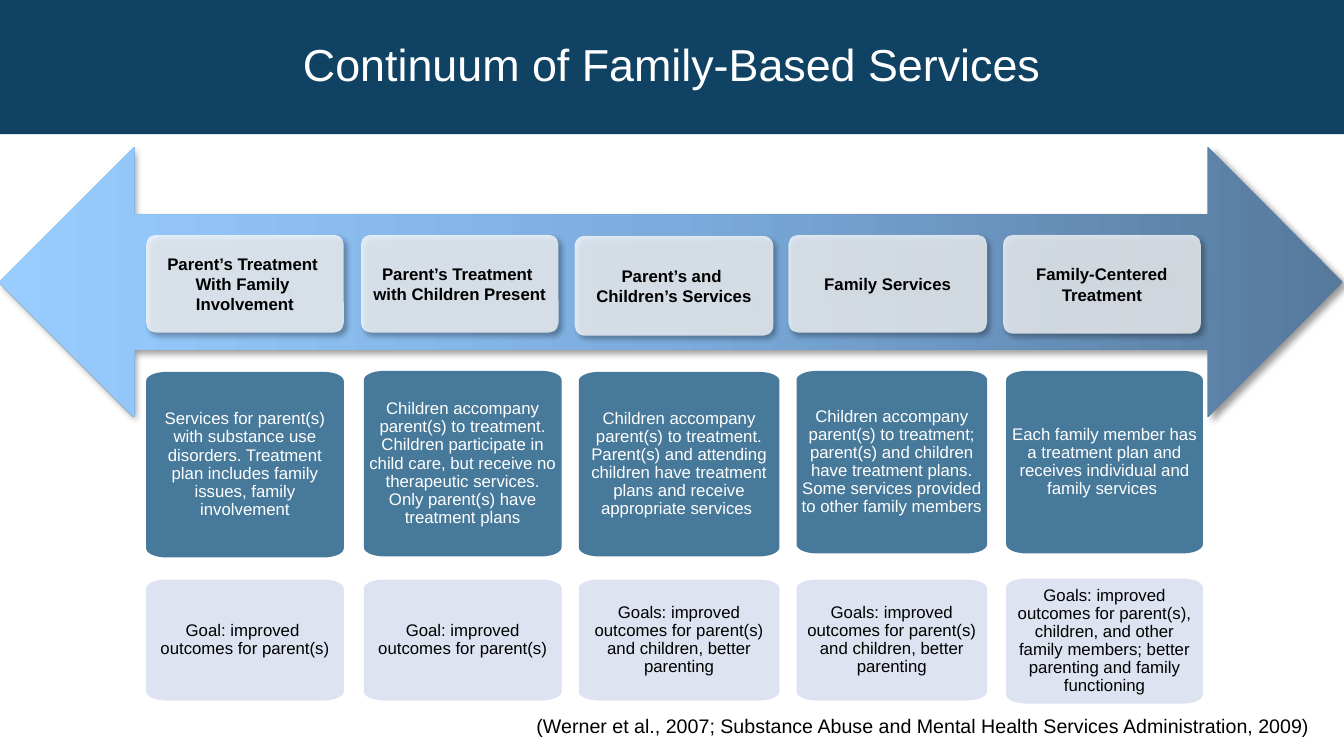
"""Build the slide on the continuum of family-based services."""
import dataclasses
import math
import typing

import lxml.etree
import pptx
import pptx.dml.color
import pptx.enum.shapes
import pptx.enum.text
import pptx.oxml.ns
import pptx.shapes.autoshape
import pptx.slide
import pptx.text.text
import pptx.util

EMU_PER_PX = 9144
ANCHOR = pptx.enum.text.MSO_ANCHOR
ALIGN = pptx.enum.text.PP_ALIGN
PRESET = pptx.enum.shapes.MSO_SHAPE


@dataclasses.dataclass(frozen=True)
class Theme:
    font: str = "Arial"
    banner: str = "0F4263"
    light: str = "FFFFFF"
    dark: str = "000000"
    description: str = "336B90"
    goal: str = "DAE0EF"
    spectrum: tuple[str, ...] = ("56799C", "7BACDD", "99CCFF")
    title_size: int = 32
    card_size: int = 12
    citation_size: int = 14


THEME = Theme()


class Box(typing.NamedTuple):
    left: int
    top: int
    width: int
    height: int

    def emu(self) -> list[int]:
        return [length * EMU_PER_PX for length in self]


class Card(typing.NamedTuple):
    box: Box
    text: str


class TextStyle(typing.NamedTuple):
    size: int
    color: str
    bold: bool = False
    align: ALIGN = ALIGN.CENTER
    line_spacing: float = 1.0


class CardStyle(typing.NamedTuple):
    fill: str
    opacity: int
    inset_x: int
    inset_y: int
    text: TextStyle


class Stage(typing.NamedTuple):
    name: Card
    description: Card
    goal: Card


NAME_STYLE = CardStyle(THEME.light, 75, 4, 3, TextStyle(THEME.card_size, THEME.dark, bold=True))
DESCRIPTION_STYLE = CardStyle(THEME.description, 90, 5, 4,
                              TextStyle(THEME.card_size, THEME.light, line_spacing=0.9))
GOAL_STYLE = CardStyle(THEME.goal, 90, 5, 4,
                       TextStyle(THEME.card_size, THEME.dark, line_spacing=0.9))
TITLE_STYLE = TextStyle(THEME.title_size, THEME.light, line_spacing=0.9)
CITATION_STYLE = TextStyle(THEME.citation_size, THEME.dark, align=ALIGN.RIGHT)

SHARED_GOAL = "Goals: improved outcomes for parent(s) and children, better parenting"
STAGES = (
    Stage(Card(Box(145, 233, 196, 97), "Parent’s Treatment \vWith Family \nInvolvement"),
          Card(Box(145, 369, 196, 184), "Services for parent(s) with substance use disorders. "
               "Treatment plan includes family issues, family involvement"),
          Card(Box(145, 575, 196, 120), "Goal: improved \voutcomes for parent(s)")),
    Stage(Card(Box(358, 233, 196, 97), "Parent’s Treatment \vwith Children Present"),
          Card(Box(361, 368, 196, 184), "Children accompany parent(s) to treatment. Children "
               "participate in child care, but receive no therapeutic services. "
               "Only parent(s) have treatment plans"),
          Card(Box(361, 575, 196, 120), "Goal: improved outcomes for parent(s)")),
    Stage(Card(Box(570, 234, 197, 99), "Parent’s and \vChildren’s Services"),
          Card(Box(574, 369, 199, 183), "Children accompany parent(s) to treatment. Parent(s) and "
               "attending children have treatment plans and receive appropriate services "),
          Card(Box(574, 575, 199, 120), SHARED_GOAL)),
    Stage(Card(Box(782, 233, 197, 97), "Family Services"),
          Card(Box(790, 368, 189, 181), "Children accompany parent(s) to treatment; parent(s) and "
               "children have treatment plans. Some services provided to other family members"),
          Card(Box(790, 575, 189, 120), SHARED_GOAL)),
    Stage(Card(Box(995, 233, 196, 98), "Family-Centered Treatment"),
          Card(Box(998, 368, 195, 181), "Each family member has a treatment plan and receives "
               "individual and family services "),
          Card(Box(998, 574, 195, 124), "Goals: improved outcomes for parent(s), children, and "
               "other family members; better parenting and family functioning")),
)


def assign(target: object, formats: dict[str, object]) -> None:
    for attribute, value in formats.items():
        setattr(target, attribute, value)


def add_xml(parent: typing.Any, tag: str, **attributes: object) -> typing.Any:
    return lxml.etree.SubElement(parent, pptx.oxml.ns.qn(tag),
                                 {key: str(value) for key, value in attributes.items()})


def paint(shape: pptx.shapes.autoshape.Shape, color: str, opacity: int = 100) -> None:
    shape.fill.solid()
    shape.fill.fore_color.rgb = pptx.dml.color.RGBColor.from_string(color)
    shape.line.fill.background()
    shape.shadow.inherit = False
    if opacity < 100:
        swatch = shape.element.spPr.xpath("./a:solidFill/a:srgbClr")[0]
        add_xml(swatch, "a:alpha", val=opacity * 1000)


def cast_shadow(shape: pptx.shapes.autoshape.Shape) -> None:
    effects = shape.element.spPr.find(pptx.oxml.ns.qn("a:effectLst"))
    shadow = add_xml(effects, "a:outerShdw", blurRad=pptx.util.Pt(4), dist=pptx.util.Pt(3),
                     dir=45 * 60000, algn="tl", rotWithShape=0)
    add_xml(add_xml(shadow, "a:srgbClr", val=THEME.dark), "a:alpha", val=40000)


def write(frame: pptx.text.text.TextFrame, text: str, style: TextStyle) -> None:
    frame.text = text
    for paragraph in frame.paragraphs:
        assign(paragraph, {"alignment": style.align, "line_spacing": style.line_spacing})
        for run in paragraph.runs:
            assign(run.font, {"name": THEME.font, "size": pptx.util.Pt(style.size),
                              "bold": style.bold})
            run.font.color.rgb = pptx.dml.color.RGBColor.from_string(style.color)


def finish_card(shape: pptx.shapes.autoshape.Shape, text: str, style: CardStyle) -> None:
    paint(shape, style.fill, style.opacity)
    inset_x, inset_y = style.inset_x * EMU_PER_PX, style.inset_y * EMU_PER_PX
    assign(shape.text_frame, {"word_wrap": True, "vertical_anchor": ANCHOR.MIDDLE,
                              "margin_left": inset_x, "margin_right": inset_x,
                              "margin_top": inset_y, "margin_bottom": inset_y})
    write(shape.text_frame, text, style.text)


def add_name(slide: pptx.slide.Slide, card: Card) -> None:
    shape = slide.shapes.add_shape(PRESET.ROUNDED_RECTANGLE, *card.box.emu())
    shape.adjustments[0] = 0.1
    finish_card(shape, card.text, NAME_STYLE)
    cast_shadow(shape)


def add_oval_cornered(slide: pptx.slide.Slide, card: Card, style: CardStyle) -> None:
    left, top, width, height = card.box.emu()
    radius_x, radius_y, steps = 20 * EMU_PER_PX, 9 * EMU_PER_PX, 10
    outline = []
    for quarter, (side_x, side_y) in enumerate(((1, 1), (-1, 1), (-1, -1), (1, -1))):
        center_x = left + width / 2 + side_x * (width / 2 - radius_x)
        center_y = top + height / 2 + side_y * (height / 2 - radius_y)
        for step in range(steps + 1):
            angle = (quarter + step / steps) * math.pi / 2
            outline.append((center_x + radius_x * math.cos(angle),
                            center_y + radius_y * math.sin(angle)))
    builder = slide.shapes.build_freeform(*outline[0])
    builder.add_line_segments(outline[1:], close=True)
    finish_card(builder.convert_to_shape(), card.text, style)


def add_spectrum_arrow(slide: pptx.slide.Slide, box: Box) -> None:
    arrow = slide.shapes.add_shape(PRESET.LEFT_RIGHT_ARROW, *box.emu())
    paint(arrow, THEME.light)
    cast_shadow(arrow)
    arrow.fill.gradient()
    arrow.fill.gradient_angle = 180
    stops = arrow.element.spPr.xpath("./a:gradFill/a:gsLst")[0]
    for stop in list(stops):
        stops.remove(stop)
    for index, color in enumerate(THEME.spectrum):
        add_xml(add_xml(stops, "a:gs", pos=index * 50000), "a:srgbClr", val=color)


def add_title(slide: pptx.slide.Slide, box: Box, text: str) -> None:
    title = slide.shapes.title
    assign(title, dict(zip(("left", "top", "width", "height"), box.emu())))
    paint(title, THEME.banner)
    assign(title.text_frame, {"vertical_anchor": ANCHOR.MIDDLE, "word_wrap": True,
                              "auto_size": pptx.enum.text.MSO_AUTO_SIZE.NONE})
    write(title.text_frame, text, TITLE_STYLE)


def main() -> None:
    deck = pptx.Presentation()
    assign(deck, {"slide_width": 1333 * EMU_PER_PX, "slide_height": 750 * EMU_PER_PX})
    slide = deck.slides.add_slide(deck.slide_layouts[5])
    add_title(slide, Box(0, 0, 1333, 133), "Continuum of Family-Based Services")
    add_spectrum_arrow(slide, Box(-1, 146, 1333, 268))
    for stage in STAGES:
        add_name(slide, stage.name)
        add_oval_cornered(slide, stage.description, DESCRIPTION_STYLE)
        add_oval_cornered(slide, stage.goal, GOAL_STYLE)
    citation = slide.shapes.add_textbox(*Box(453, 703, 856, 34).emu())
    citation.text_frame.word_wrap = True
    write(citation.text_frame, "(Werner et al., 2007; Substance Abuse and Mental Health Services "
          "Administration, 2009)", CITATION_STYLE)
    deck.save("out.pptx")


if __name__ == "__main__":
    main()
